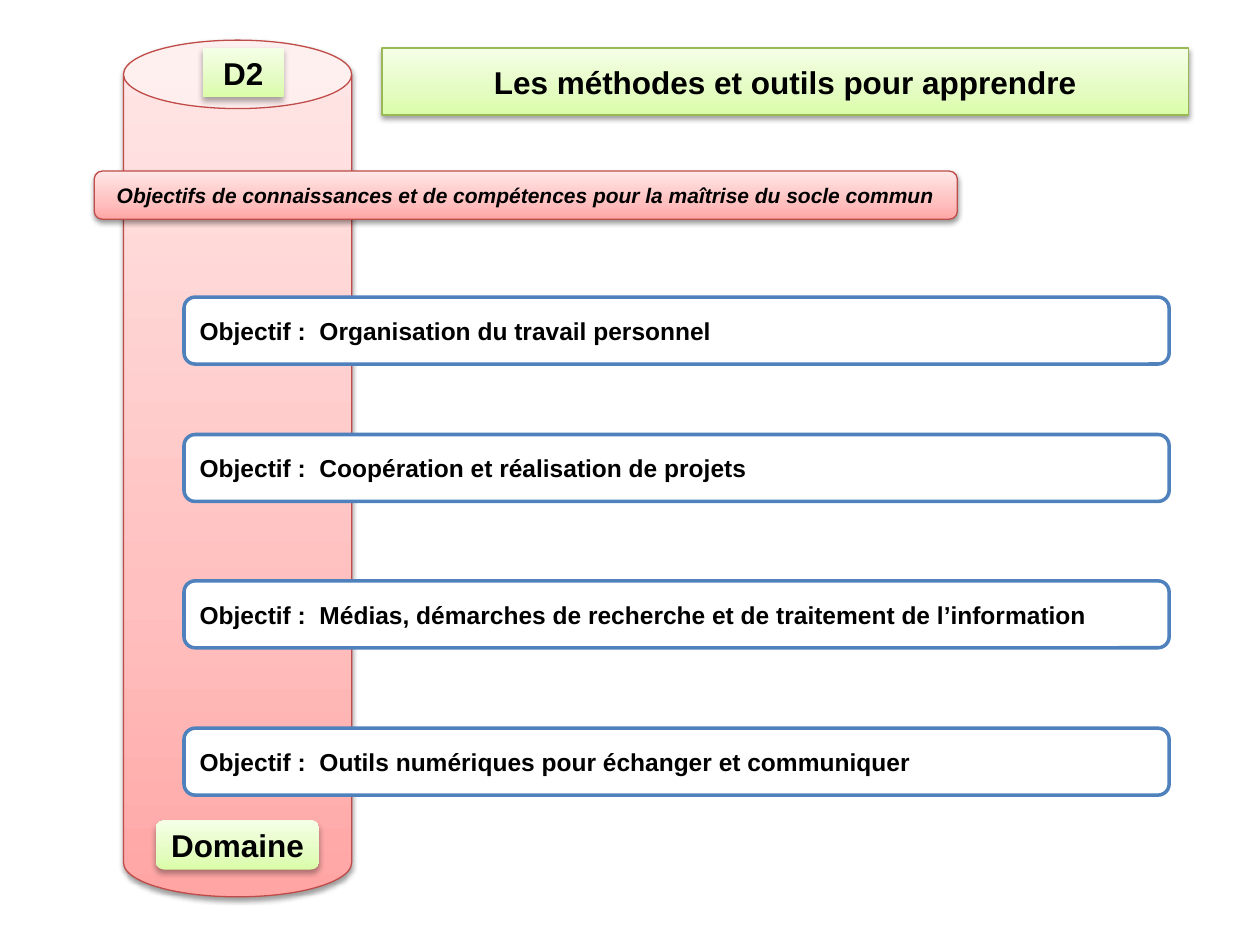
from copy import deepcopy
from dataclasses import dataclass

from lxml import etree
from pptx import Presentation
from pptx.dml.color import RGBColor
from pptx.enum.shapes import MSO_SHAPE
from pptx.enum.text import MSO_ANCHOR, MSO_AUTO_SIZE, PP_ALIGN
from pptx.oxml.ns import qn
from pptx.util import Cm, Pt

CAN, RECTANGLE, ROUNDED = MSO_SHAPE.CAN, MSO_SHAPE.RECTANGLE, MSO_SHAPE.ROUNDED_RECTANGLE
LEFT, CENTER = PP_ALIGN.LEFT, PP_ALIGN.CENTER
TITLE_ONLY = 5


@dataclass(frozen=True)
class Theme:
    font: str = "Arial"
    text: str = "000000"
    white: str = "FFFFFF"
    blue: str = "4F81BD"
    red_line: str = "BF4C48"
    green_line: str = "98B955"
    red: tuple = ("FFA6A5", "FFC0BF", "FFE7E7")
    green: tuple = ("DAFDA7", "E4FCC2", "F5FFE7")
    stops: tuple = (0, 0.35, 1)
    heading_size: int = 18
    objective_size: int = 14
    subtitle_size: int = 12
    # Blur and distance in points, opacity in percent
    shape_shadow: tuple = (3.1, 1.6, 38)
    label_shadow: tuple = (3.5, 2.2, 32)


THEME = Theme()


def fill_gradient(shape, colors):
    """Run the three colours from the bottom edge to the top edge."""
    fill = shape.fill
    fill.gradient()
    fill.gradient_angle = 90
    stop_list = shape._element.spPr.find(qn("a:gradFill")).find(qn("a:gsLst"))
    stop_list.append(deepcopy(stop_list[0]))
    for stop, color, position in zip(fill.gradient_stops, colors, THEME.stops):
        stop.color.rgb = RGBColor.from_string(color)
        stop.position = position


def add_shadow(shape, blur, distance, opacity):
    effects = shape._element.spPr.find(qn("a:effectLst"))
    shadow = etree.SubElement(effects, qn("a:outerShdw"), blurRad=str(Pt(blur)),
                              dist=str(Pt(distance)), dir="5400000", rotWithShape="0")
    color = etree.SubElement(shadow, qn("a:srgbClr"), val=THEME.text)
    etree.SubElement(color, qn("a:alpha"), val=str(opacity * 1000))


def style_shape(shape, fill, line=None, line_width=0.75, shadow=None):
    if isinstance(fill, tuple):
        fill_gradient(shape, fill)
    else:
        shape.fill.solid()
        shape.fill.fore_color.rgb = RGBColor.from_string(fill)
    if line:
        shape.line.color.rgb = RGBColor.from_string(line)
        shape.line.width = Pt(line_width)
    else:
        shape.line.fill.background()
    shape.shadow.inherit = False
    if shadow:
        add_shadow(shape, *shadow)


def write_text(shape, text, size, alignment=CENTER, italic=False):
    frame = shape.text_frame
    frame_format = {"word_wrap": True, "auto_size": MSO_AUTO_SIZE.NONE,
                    "vertical_anchor": MSO_ANCHOR.MIDDLE}
    for name, value in frame_format.items():
        setattr(frame, name, value)
    paragraph = frame.paragraphs[0]
    paragraph.alignment = alignment
    run = paragraph.add_run()
    run.text = text
    run_format = {"name": THEME.font, "size": Pt(size), "bold": True, "italic": italic}
    for name, value in run_format.items():
        setattr(run.font, name, value)
    run.font.color.rgb = RGBColor.from_string(THEME.text)


def add_shape(slide, kind, box, **style):
    shape = slide.shapes.add_shape(kind, *(Cm(length) for length in box))
    style_shape(shape, **style)
    return shape


def add_title(slide, box, text):
    """Turn the title placeholder into a rounded green banner."""
    title = slide.shapes.title
    for name, length in zip(("left", "top", "width", "height"), box):
        setattr(title, name, Cm(length))
    geometry = etree.SubElement(title._element.spPr, qn("a:prstGeom"), prst="roundRect")
    etree.SubElement(geometry, qn("a:avLst"))
    style_shape(title, THEME.green, THEME.green_line, shadow=THEME.shape_shadow)
    write_text(title, text, THEME.heading_size)


def add_pillar(slide, box, code, caption):
    """Draw the cylinder with a label on its lid and one at its foot."""
    left, top, width, height = box
    pillar = add_shape(slide, CAN, box, fill=THEME.red, line=THEME.red_line,
                       shadow=THEME.shape_shadow)
    pillar.adjustments[0] = 0.3
    label_height = 0.99
    labels = (
        (RECTANGLE, code, 1.6, 1.63, 0.16),
        (ROUNDED, caption, (width - 3.3) / 2, 3.3, height - 1.54),
    )
    for kind, text, offset, label_width, drop in labels:
        label = add_shape(slide, kind, (left + offset, top + drop, label_width, label_height),
                          fill=THEME.green, shadow=THEME.label_shadow)
        write_text(label, text, THEME.heading_size)


def add_subtitle(slide, box, text):
    banner = add_shape(slide, ROUNDED, box, fill=THEME.red, line=THEME.red_line,
                       shadow=THEME.shape_shadow)
    write_text(banner, text, THEME.subtitle_size, italic=True)


def add_objectives(slide, box, objectives):
    """Place each objective at its own drop below the top of the box."""
    left, top, width, row_height = box
    for drop, objective in objectives:
        row = add_shape(slide, ROUNDED, (left, top + drop, width, row_height),
                        fill=THEME.white, line=THEME.blue, line_width=2)
        write_text(row, f"Objectif :  {objective}", THEME.objective_size, LEFT)


def main():
    presentation = Presentation()
    presentation.slide_width, presentation.slide_height = Cm(25.4), Cm(19.05)
    slide = presentation.slides.add_slide(presentation.slide_layouts[TITLE_ONLY])
    add_title(slide, (7.7, 0.97, 16.26, 1.35), "Les méthodes et outils pour apprendre")
    add_pillar(slide, (2.49, 0.81, 4.6, 17.27), "D2", "Domaine")
    add_objectives(slide, (3.71, 5.99, 19.86, 1.35), (
        (0, "Organisation du travail personnel"),
        (2.77, "Coopération et réalisation de projets"),
        (5.72, "Médias, démarches de recherche et de traitement de l’information"),
        (8.69, "Outils numériques pour échanger et communiquer"),
    ))
    add_subtitle(slide, (1.9, 3.45, 17.4, 0.97),
                 "Objectifs de connaissances et de compétences pour la maîtrise du socle commun")
    presentation.save("out.pptx")


if __name__ == "__main__":
    main()
